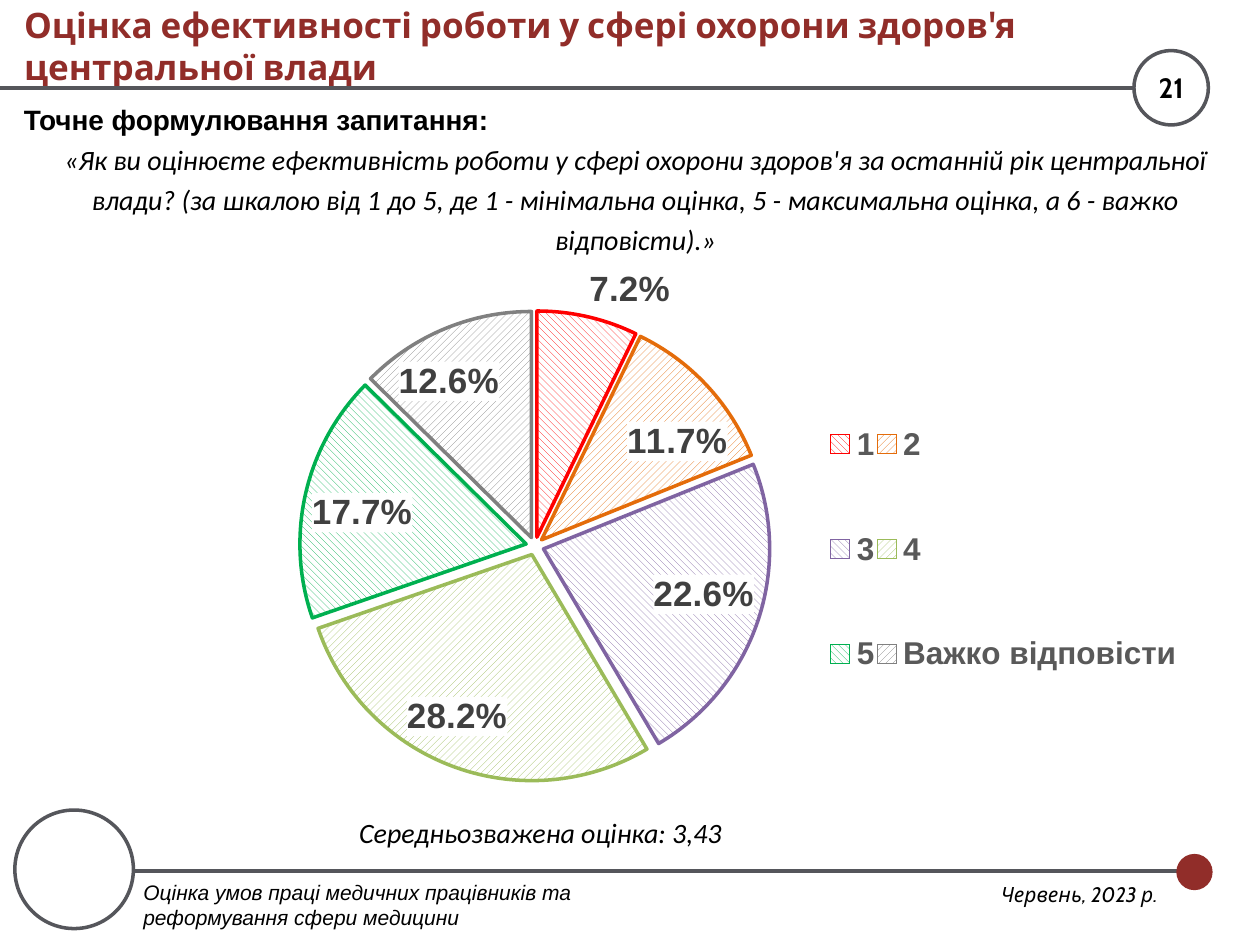
from lxml import etree
from pptx import Presentation
from pptx.chart.data import CategoryChartData as ChartData
from pptx.dml.color import RGBColor
from pptx.enum.chart import XL_CHART_TYPE as Chart
from pptx.enum.chart import XL_LABEL_POSITION as Spot
from pptx.enum.chart import XL_LEGEND_POSITION as Side
from pptx.enum.dml import MSO_PATTERN as Hatch
from pptx.enum.shapes import MSO_CONNECTOR as Link
from pptx.enum.shapes import MSO_SHAPE as Shape
from pptx.enum.text import MSO_ANCHOR as Anchor
from pptx.enum.text import MSO_AUTO_SIZE as Auto
from pptx.enum.text import PP_ALIGN as Align
from pptx.oxml import parse_xml
from pptx.oxml.ns import nsdecls, qn
from pptx.util import Cm, Pt

GREY, BRICK, WHITE, BLACK = "55565B", "912D29", "FFFFFF", "000000"
SLICES = [
    ("1", 0.072, "FF0000"),
    ("2", 0.117, "E46C0A"),
    ("3", 0.226, "8064A2"),
    ("4", 0.282, "9BBB59"),
    ("5", 0.177, "00B050"),
    ("Важко відповісти", 0.126, "808080"),
]


def color(code):
    return RGBColor.from_string(code)


def style(font, name, size, code=BLACK, **flags):
    values = {"name": name, "size": Pt(size), "bold": False, "italic": False}
    for key, value in {**values, **flags}.items():
        setattr(font, key, value)
    font.color.rgb = color(code)


def layout(x, y, w, h, inner=False):
    """Manual chart layout in fractions of the chart space."""
    target = '<c:layoutTarget val="inner"/>' if inner else ""
    modes = '<c:xMode val="edge"/><c:yMode val="edge"/>'
    sizes = "".join(f'<c:{tag} val="{val}"/>'
                    for tag, val in zip("xywh", (x, y, w, h)))
    return parse_xml(f'<c:layout {nsdecls("c")}><c:manualLayout>{target}'
                     f'{modes}{sizes}</c:manualLayout></c:layout>')


def place(parent, new):
    """Put a layout in its element, in the place of any old one."""
    for old in parent.findall(qn("c:layout")):
        parent.remove(old)
    first = parent.find(qn("c:legendPos"))
    if first is None:
        parent.insert(0, new)
    else:
        first.addnext(new)


class Deck:
    def __init__(self):
        self.show = Presentation()
        self.show.slide_width, self.show.slide_height = Cm(25.4), Cm(19.05)
        self.slide = self.show.slides.add_slide(self.show.slide_layouts[5])
        self.items = self.slide.shapes

    def title(self, text, x, y, w, h):
        box = self.items.title
        box.left, box.top, box.width, box.height = map(Cm, (x, y, w, h))
        frame = box.text_frame
        frame.auto_size = Auto.NONE
        frame.vertical_anchor = Anchor.MIDDLE
        frame.text = text
        part = frame.paragraphs[0]
        part.alignment = Align.LEFT
        style(part.font, "Cabin", 20, BRICK, bold=True)

    def disc(self, x, y, size, fill, edge):
        disc = self.items.add_shape(Shape.OVAL, *map(Cm, (x, y, size, size)))
        disc.shadow.inherit = False
        disc.fill.solid()
        disc.fill.fore_color.rgb = color(fill)
        disc.line.color.rgb = color(edge)
        disc.line.width = Pt(2)

    def rule(self, left, right, y):
        rule = self.items.add_connector(
            Link.STRAIGHT, Cm(right), Cm(y), Cm(left), Cm(y))
        rule.line.color.rgb = color(GREY)
        rule.line.width = Pt(2.25)
        etree.SubElement(rule._element.spPr, qn("a:effectLst"))

    def text(self, x, y, w, h, *parts, space=1.0):
        """Each part is (text, alignment, font name, size, flags)."""
        frame = self.items.add_textbox(*map(Cm, (x, y, w, h))).text_frame
        frame.word_wrap = True
        frame.auto_size = Auto.SHAPE_TO_FIT_TEXT
        for i, (words, align, name, size, flags) in enumerate(parts):
            part = frame.add_paragraph() if i else frame.paragraphs[0]
            part.alignment, part.line_spacing = align, space
            run = part.add_run()
            run.text = words
            style(run.font, name, size, **flags)

    def pie(self, x, y, w, h, slices):
        data = ChartData(number_format="0.0%")
        data.categories = [name for name, _, _ in slices]
        data.add_series("Оцінка", [share for _, share, _ in slices])
        chart = self.items.add_chart(
            Chart.PIE, *map(Cm, (x, y, w, h)), data).chart
        chart.has_title = False
        style(chart.font, "Arial", 12, bold=True)

        # Hatched slices, pulled apart
        plot = chart.plots[0]
        plot.vary_by_categories = True
        series = plot.series[0]
        hatches = (Hatch.WIDE_DOWNWARD_DIAGONAL, Hatch.WIDE_UPWARD_DIAGONAL)
        for i, (_, _, code) in enumerate(slices):
            look = series.points[i].format
            look.fill.patterned()
            look.fill.pattern = hatches[i % 2]
            look.fill.fore_color.rgb = color(code)
            look.fill.back_color.rgb = color(WHITE)
            look.line.color.rgb = color(code)
            look.line.width = Pt(2)
        series._element.find(qn("c:dPt")).addprevious(
            parse_xml(f'<c:explosion {nsdecls("c")} val="4"/>'))

        # Labels on white
        labels = series.data_labels
        labels.show_value = True
        labels.number_format = "0.0%"
        labels.number_format_is_linked = False
        labels.position = Spot.BEST_FIT
        style(labels.font, "Arial", 20, "404040", bold=True)
        labels._element.find(qn("c:txPr")).addprevious(parse_xml(
            f'<c:spPr {nsdecls("c", "a")}><a:solidFill>'
            f'<a:srgbClr val="{WHITE}"/></a:solidFill></c:spPr>'))

        # Legend and plot area
        chart.has_legend = True
        legend = chart.legend
        legend.position = Side.BOTTOM
        legend.include_in_layout = False
        style(legend.font, "Arial", 18, "595959", bold=True)
        place(legend._element, layout(0.64, 0.16, 0.36, 0.66))
        area = chart._chartSpace.chart.plotArea
        place(area, layout(0.08, 0.08, 0.52, 0.81, inner=True))


def main():
    deck = Deck()
    slant, bold = {"italic": True}, {"bold": True}

    # Frame of the page
    deck.disc(0.3, 16.33, 2.39, WHITE, GREY)
    deck.rule(2.69, 23.75, 17.55)
    deck.disc(23.75, 17.25, 0.66, BRICK, BRICK)
    deck.rule(0, 22.86, 1.78)
    deck.text(16.1, 17.65, 7.49, 0.76,
              ("Червень, 2023 р.", Align.RIGHT, "Cabin", 12, slant))
    deck.text(2.64, 17.6, 11.46, 1.27,
              ("Оцінка умов праці медичних працівників та реформування "
               "сфери медицини", Align.LEFT, "Arial", 12, slant))
    deck.disc(22.86, 1.02, 1.5, WHITE, GREY)
    deck.text(22.86, 1.3, 1.5, 0.94, ("21", Align.CENTER, "Cabin", 16, bold))

    # Title and question
    deck.title("Оцінка ефективності роботи у сфері охорони здоров'я "
               "центральної влади", 0.23, 0.33, 22.63, 1.17)
    deck.text(0.23, 1.8, 25.17, 3.53,
              ("Точне формулювання запитання:", Align.LEFT, "Arial", 16, bold),
              ("«Як ви оцінюєте ефективність роботи у сфері охорони здоров'я "
               "за останній рік центральної влади? (за шкалою від 1 до 5, "
               "де 1 - мінімальна оцінка, 5 - максимальна оцінка, "
               "а 6 - важко відповісти).»",
               Align.CENTER, "Calibri", 16, slant), space=1.2)

    # Answers and mean score
    deck.pie(4.09, 5.33, 19.69, 11.71, SLICES)
    deck.text(6.99, 16.18, 11.63, 1.07,
              ("Середньозважена оцінка: 3,43", Align.LEFT, "Calibri", 16,
               slant), space=1.2)
    deck.show.save("out.pptx")


if __name__ == "__main__":
    main()
